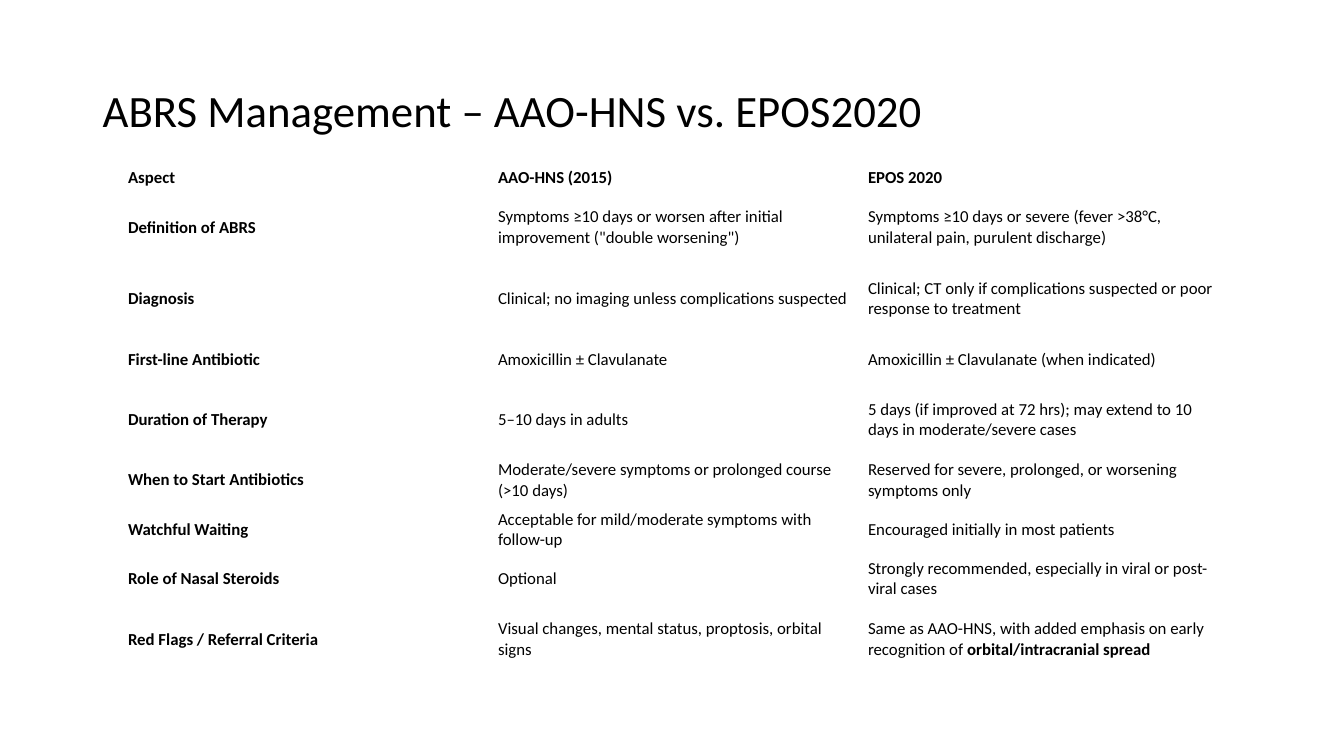
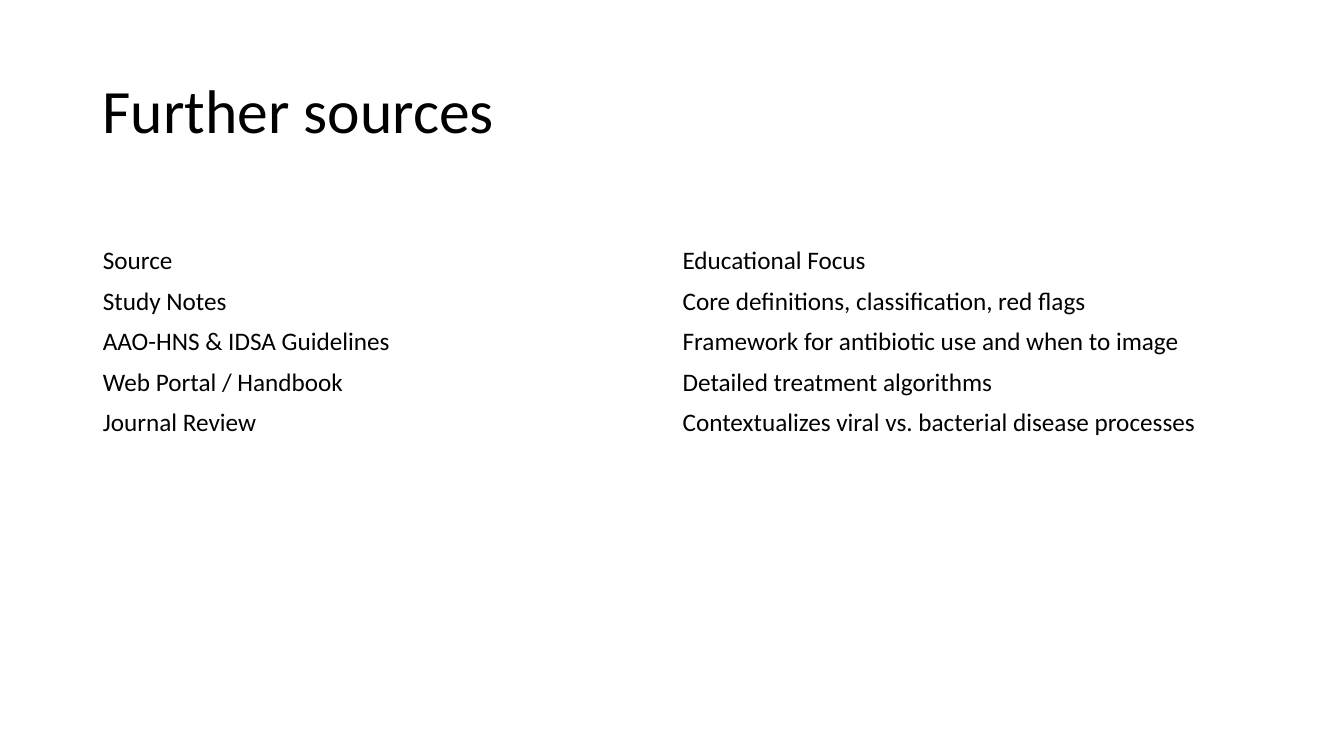
"""Build two slides: a guideline comparison and a list of further sources."""
from dataclasses import dataclass

from pptx import Presentation
from pptx.dml.color import RGBColor
from pptx.enum.text import MSO_ANCHOR as Anchor
from pptx.slide import Slide
from pptx.text.text import _Paragraph as Paragraph
from pptx.util import Emu, Pt

Rows = list[tuple[str, ...]]


@dataclass(frozen=True)
class Theme:
    """Colours, font and type sizes of the deck."""
    ink: RGBColor = RGBColor(0, 0, 0)
    font: str = "Calibri"
    title: int = 44
    long_title: int = 32
    body: int = 18
    small: int = 12


@dataclass(frozen=True)
class TableSpec:
    """Place, grid and type of one table, in px and points."""
    left: int
    top: int
    col_width: int
    heights: tuple[int, ...]
    inset_x: int
    inset_y: int
    size: int
    bold_heads: bool


@dataclass(frozen=True)
class Page:
    """One slide: a title over a table."""
    title: str
    title_size: int
    table: TableSpec
    rows: Rows


THEME = Theme()
SHORT, TALL = 49, 71

COMPARISON: Rows = [
    ("Aspect", "AAO-HNS (2015)", "EPOS 2020"),
    ("Definition of ABRS",
     "Symptoms ≥10 days or worsen after initial improvement (\"double worsening\")",
     "Symptoms ≥10 days or severe (fever >38°C, unilateral pain, purulent discharge)"),
    ("Diagnosis",
     "Clinical; no imaging unless complications suspected",
     "Clinical; CT only if complications suspected or poor response to treatment"),
    ("First-line Antibiotic",
     "Amoxicillin ± Clavulanate",
     "Amoxicillin ± Clavulanate (when indicated)"),
    ("Duration of Therapy",
     "5–10 days in adults",
     "5 days (if improved at 72 hrs); may extend to 10 days in moderate/severe cases"),
    ("When to Start Antibiotics",
     "Moderate/severe symptoms or prolonged course (>10 days)",
     "Reserved for severe, prolonged, or worsening symptoms only"),
    ("Watchful Waiting",
     "Acceptable for mild/moderate symptoms with follow-up",
     "Encouraged initially in most patients"),
    ("Role of Nasal Steroids",
     "Optional",
     "Strongly recommended, especially in viral or post-viral cases"),
    ("Red Flags / Referral Criteria",
     "Visual changes, mental status, proptosis, orbital signs",
     "Same as AAO-HNS, with added emphasis on early recognition of "
     "**orbital/intracranial spread**"),
]

SOURCES: Rows = [
    ("Source", "Educational Focus"),
    ("Study Notes", "Core definitions, classification, red flags"),
    ("AAO-HNS & IDSA Guidelines", "Framework for antibiotic use and when to image"),
    ("Web Portal / Handbook", "Detailed treatment algorithms"),
    ("Journal Review", "Contextualizes viral vs. bacterial disease processes"),
]

PAGES = [
    Page("ABRS Management – AAO-HNS vs. EPOS2020", THEME.long_title,
         TableSpec(120, 162, 367,
                   (28, TALL, TALL, SHORT, TALL, SHORT, SHORT, SHORT, TALL),
                   7, 3, THEME.small, True),
         COMPARISON),
    Page("Further sources", THEME.title,
         TableSpec(92, 239, 575, (40,) * len(SOURCES), 10, 5, THEME.body, False),
         SOURCES),
]


def px(n: int) -> Emu:
    """Turn px into EMU, at 100 px to the inch."""
    return Emu(n * 9144)


def apply(target: object, values: dict[str, object]) -> None:
    """Set each named attribute on the target."""
    for name, value in values.items():
        setattr(target, name, value)


def write(p: Paragraph, text: str, size: int, bold: bool = False) -> None:
    """Write text as runs; parts between double asterisks are bold."""
    for i, part in enumerate(text.split("**")):
        if part:
            r = p.add_run()
            r.text = part
            apply(r.font, {"name": THEME.font, "size": Pt(size),
                           "bold": bold or i % 2 == 1})
            r.font.color.rgb = THEME.ink


def add_title(s: Slide, text: str, size: int) -> None:
    """Add the slide title."""
    tf = s.shapes.add_textbox(px(92), px(40), px(1150), px(145)).text_frame
    apply(tf, {"word_wrap": True, "vertical_anchor": Anchor.MIDDLE})
    p = tf.paragraphs[0]
    p.line_spacing = 0.9
    write(p, text, size)


def add_table(s: Slide, spec: TableSpec, rows: Rows) -> None:
    """Add a plain table without fills or banding."""
    n_cols = len(rows[0])
    table = s.shapes.add_table(
        len(rows), n_cols, px(spec.left), px(spec.top),
        px(spec.col_width * n_cols), px(sum(spec.heights))).table
    apply(table, {"first_row": False, "horz_banding": False})
    for col in table.columns:
        col.width = px(spec.col_width)
    x, y = px(spec.inset_x), px(spec.inset_y)
    layout = {"vertical_anchor": Anchor.MIDDLE, "margin_left": x,
              "margin_right": x, "margin_top": y, "margin_bottom": y}
    for i, (row, height) in enumerate(zip(rows, spec.heights)):
        table.rows[i].height = px(height)
        for j, text in enumerate(row):
            cell = table.cell(i, j)
            cell.fill.background()
            apply(cell, layout)
            write(cell.text_frame.paragraphs[0], text, spec.size,
                  spec.bold_heads and 0 in (i, j))


def main() -> None:
    """Build and save the deck."""
    prs = Presentation()
    apply(prs, {"slide_width": px(1333), "slide_height": px(750)})
    for page in PAGES:
        s = prs.slides.add_slide(prs.slide_layouts[6])
        add_title(s, page.title, page.title_size)
        add_table(s, page.table, page.rows)
    prs.save("out.pptx")


if __name__ == "__main__":
    main()
